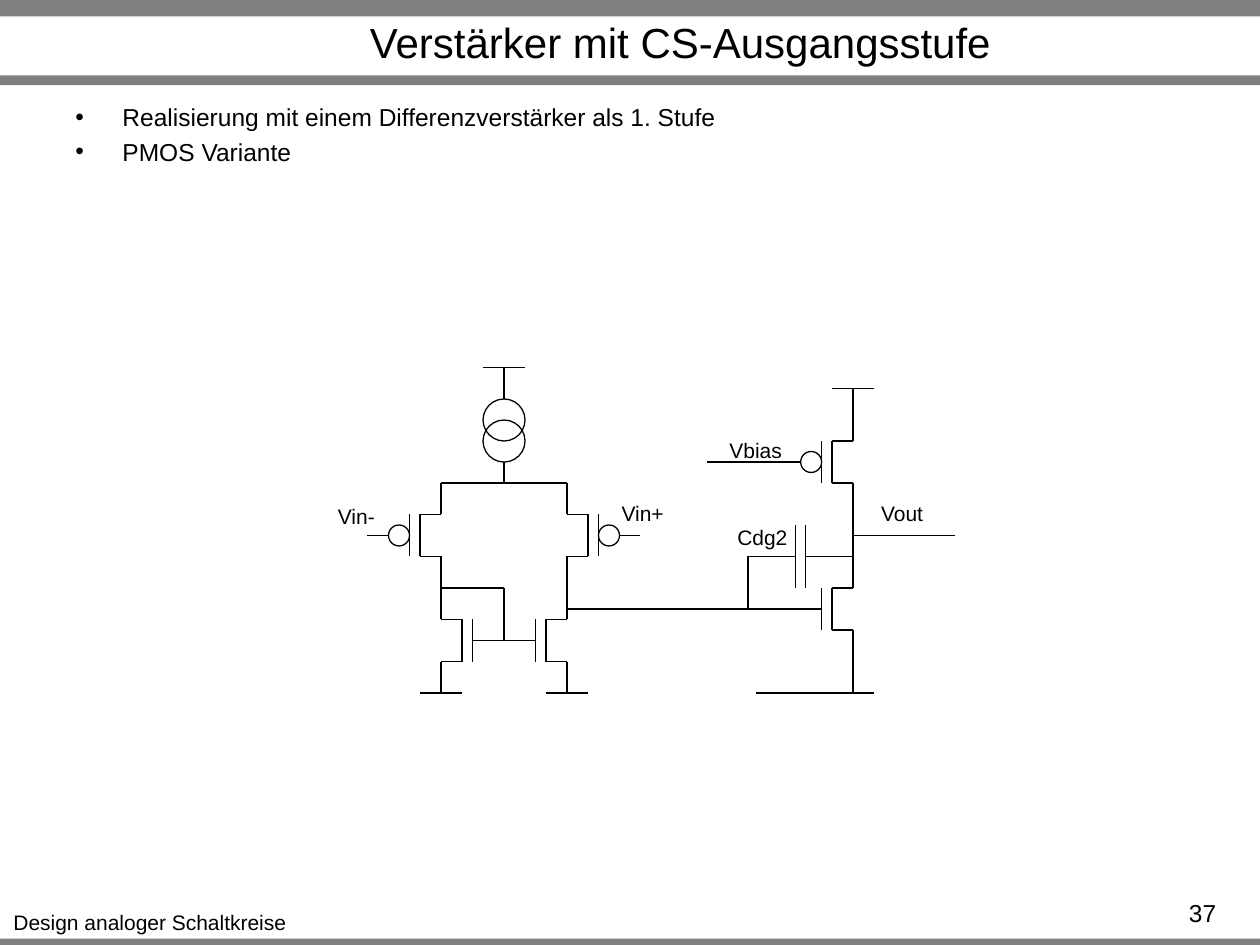
from lxml.etree import SubElement
from pptx import Presentation
from pptx.dml.color import RGBColor
from pptx.enum.shapes import MSO_CONNECTOR as Connector, MSO_SHAPE as Shape
from pptx.enum.text import MSO_ANCHOR as Anchor, MSO_AUTO_SIZE as AutoSize, PP_ALIGN as Align
from pptx.oxml.ns import qn
from pptx.util import Cm, Pt

GRID = 2.54 / 12  # schematic grid step in cm


def color(hex_code):
    return RGBColor.from_string(hex_code)


def grid(*steps):
    return [Cm(step * GRID) for step in steps]


class SchematicSlide:
    font = "Arial"
    ink = "000000"
    paper = "FFFFFF"
    bar_gray = "808080"
    stroke = Pt(0.75)

    def __init__(self, slide):
        self.slide = slide

    def bar(self, top, height):
        """Draw a gray band across the full slide width."""
        band = self.slide.shapes.add_shape(Shape.RECTANGLE, 0, Cm(top), Cm(25.4), Cm(height))
        band.shadow.inherit = False
        band.fill.solid()
        band.fill.fore_color.rgb = color(self.bar_gray)
        band.line.fill.background()

    def text(self, lines, left, top, width, height, size, align=Align.CENTER, wrap=True):
        box = self.slide.shapes.add_textbox(Cm(left), Cm(top), Cm(width), Cm(height))
        frame = box.text_frame
        frame.word_wrap = wrap
        frame.auto_size = AutoSize.NONE if wrap else AutoSize.SHAPE_TO_FIT_TEXT
        frame.text = "\n".join(lines)
        for paragraph in frame.paragraphs:
            paragraph.alignment = align
            for run in paragraph.runs:
                run.font.name = self.font
                run.font.size = Pt(size)
                run.font.color.rgb = color(self.ink)
        return frame

    def label(self, words, left, top, width):
        self.text([words], left, top, width, 0.76, 12, wrap=False)

    def bullets(self, lines, left, top, width, height):
        frame = self.text(lines, left, top, width, height, 14, Align.LEFT)
        for index, paragraph in enumerate(frame.paragraphs):
            if index:
                paragraph.space_before = Pt(3)
            properties = paragraph._p.get_or_add_pPr()
            properties.set("marL", str(Cm(0.95)))
            properties.set("indent", str(-Cm(0.95)))
            SubElement(properties, qn("a:buFont"), typeface=self.font)
            SubElement(properties, qn("a:buChar"), char="•")

    def wire(self, x1, y1, x2, y2, parent=None):
        """Draw a line between two grid points."""
        shapes = (parent or self.slide).shapes
        line = shapes.add_connector(Connector.STRAIGHT, *grid(x1, y1, x2, y2))
        line.line.color.rgb = color(self.ink)
        line.line.width = self.stroke
        SubElement(line._element.spPr, qn("a:effectLst"))

    def circle(self, x, y, radius, filled=False, parent=None):
        """Draw a circle around a grid point."""
        shapes = (parent or self.slide).shapes
        ring = shapes.add_shape(
            Shape.OVAL, *grid(x - radius, y - radius, 2 * radius, 2 * radius))
        ring.shadow.inherit = False
        ring.line.color.rgb = color(self.ink)
        ring.line.width = self.stroke
        if filled:
            ring.fill.solid()
            ring.fill.fore_color.rgb = color(self.paper)
        else:
            ring.fill.background()

    def transistor(self, x, y, side, pmos=False):
        """Draw a MOSFET whose gate points left (side -1) or right (side 1)."""
        group = self.slide.shapes.add_group_shape()
        channel, gate, gate_end = (x + side * step for step in (2, 3, 7))
        for end in (-1, 1):
            self.wire(x, y + 2 * end, channel, y + 2 * end, group)
            self.wire(x, y + 2 * end, x, y + 5 * end, group)
        for plate in (channel, gate):
            self.wire(plate, y - 2, plate, y + 2, group)
        self.wire(gate, y, gate_end, y, group)
        if pmos:
            self.circle(x + side * 4, y, 1, True, group)

    def capacitor(self, left, right, y):
        group = self.slide.shapes.add_group_shape()
        middle = (left + right) / 2
        for end, plate in ((left, middle - 0.5), (right, middle + 0.5)):
            self.wire(end, y, plate, y, group)
            self.wire(plate, y - 3, plate, y + 3, group)


def main():
    deck = Presentation()
    deck.slide_width, deck.slide_height = Cm(25.4), Cm(19.05)
    page = SchematicSlide(deck.slides.add_slide(deck.slide_layouts[6]))

    for top, height in ((18.92, 0.13), (0, 0.33), (1.52, 0.2)):
        page.bar(top, height)
    page.text(["Design analoger Schaltkreise"], 0, 18.21, 6.05, 0.76, 12, wrap=False)
    page.text(["37"], 15.04, 17.98, 9.73, 1.07, 14, Align.RIGHT)
    title = page.text(["Verstärker mit CS-Ausgangsstufe"], 3.3, 0.36, 20.83, 0.97, 24)
    title.vertical_anchor = Anchor.MIDDLE
    page.bullets(["Realisierung mit einem Differenzverstärker als 1. Stufe", "PMOS Variante"],
                 1.27, 1.93, 22.86, 1.68)

    # Columns and rows of the circuit, in grid steps
    left, tail, right, output = 42, 48, 54, 81.25
    ground, mirror_drain, tail_row, stage_gate = 66, 56, 46, 58
    feedback, feedback_row = 71.25, 53

    # Differential pair with current mirror
    for column, outward in ((left, -1), (right, 1)):
        page.transistor(column, 51, outward, pmos=True)
        page.transistor(column, 61, -outward)
        page.wire(column - 2, ground, column + 2, ground)
    page.wire(left, tail_row, right, tail_row)
    page.wire(left, mirror_drain, tail, mirror_drain)
    page.wire(tail, mirror_drain, tail, 61)

    # Tail current source
    page.wire(tail, tail_row, tail, 44)
    for center in (40, 42):
        page.circle(tail, center, 2)
    page.wire(tail, 38, tail, 35)
    page.wire(tail - 2, 35, tail + 2, 35)

    # Common-source output stage
    page.wire(right, stage_gate, output - 3, stage_gate)
    page.transistor(output, stage_gate, -1)
    page.wire(output, 63, output, ground)
    page.wire(72, ground, output + 2, ground)
    page.wire(67.33, 44, output - 3, 44)
    page.transistor(output, 44, -1, pmos=True)
    page.wire(output - 2, 37, output + 2, 37)
    page.wire(output, 37, output, 40)
    page.wire(output, 49, output, feedback_row)
    page.wire(output, 51, 91, 51)

    # Feedback capacitor
    page.capacitor(feedback, output, feedback_row)
    page.wire(feedback, feedback_row, feedback, stage_gate)

    for words, x, y, width in (
        ("Vbias", 14.45, 8.69, 1.57),
        ("Vout", 17.5, 9.96, 1.37),
        ("Cdg2", 14.61, 10.44, 1.52),
        ("Vin+", 12.27, 9.96, 1.37),
        ("Vin-", 6.55, 10.03, 1.27),
    ):
        page.label(words, x, y, width)

    deck.save("out.pptx")


if __name__ == "__main__":
    main()
